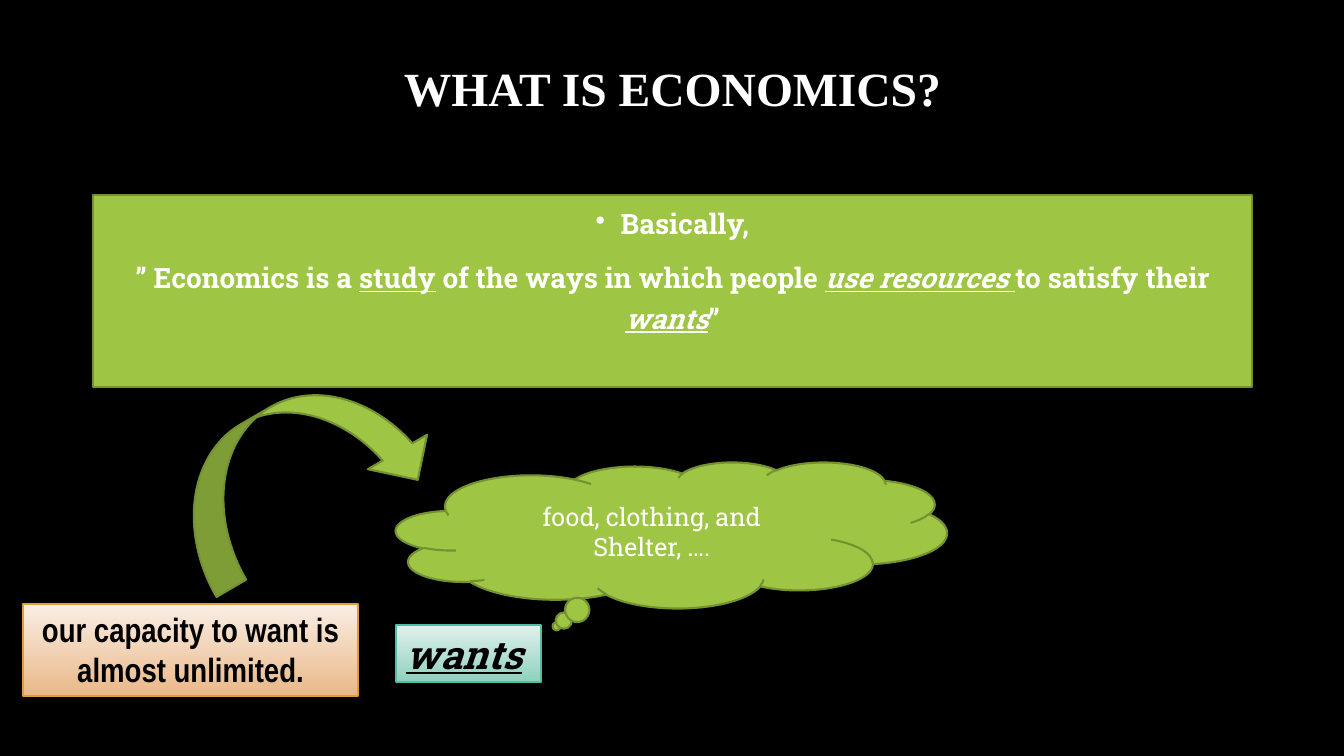
from pptx import Presentation
from pptx.dml.color import RGBColor
from pptx.enum.shapes import MSO_SHAPE as Shape
from pptx.enum.text import MSO_ANCHOR as Anchor, MSO_AUTO_SIZE as AutoSize, PP_ALIGN as Align
from pptx.oxml import parse_xml
from pptx.oxml.ns import nsdecls
from pptx.util import Pt

BLACK, WHITE = RGBColor(0, 0, 0), RGBColor(255, 255, 255)
GREEN, DARK_GREEN = RGBColor(0x9E, 0xC5, 0x44), RGBColor(0x75, 0x92, 0x32)
MINT = [RGBColor(0xE1, 0xF1, 0xEC), RGBColor(0x8F, 0xD1, 0xBE)]
TEAL = RGBColor(0x50, 0xBE, 0xA3)
PEACH = [RGBColor(0xF9, 0xEE, 0xE5), RGBColor(0xEA, 0xB8, 0x87)]
ORANGE = RGBColor(0xDE, 0x9C, 0x3C)
SLAB, SERIF, NARROW = "Roboto Slab", "Times New Roman", "Arial Narrow"

# Content: each paragraph is a list of (text, style); u = underline, i = italic
TITLE = [[("WHAT IS ECONOMICS?", "")]]
DEFINITION = [
    [("Basically,", "")],
    [("”\u00a0Economics is a ", ""), ("study", "u"),
     (" of the ways in which people ", ""), ("use resources ", "iu"),
     ("to satisfy their ", ""), ("wants", "iu"), ("”", "")],
]
NEEDS = [[("food, clothing, and", "")], [("Shelter, ….", "")]]
WANTS = [[("wants", "iu")]]
CAPACITY = [[("our capacity to want is almost unlimited.", "")]]

# Places in px: left, top, width, height
TITLE_BOX = (93, 40, 1159, 103)
DEFINITION_BOX = (93, 195, 1159, 192)
CLOUD_BOX = (396, 462, 551, 146)
WANTS_BOX = (396, 625, 145, 57)
ARROW_BOX = (229, 337, 137, 267)
CAPACITY_BOX = (23, 604, 335, 92)


def px(length):
    return round(length * 914400 / 100.8)


def add_block(kind, box, fill, line, line_width):
    shape = slide.shapes.add_shape(kind, *map(px, box))
    shape.shadow.inherit = False
    if isinstance(fill, list):
        shape.fill.gradient()
        shape.fill.gradient_angle = 270
        for stop, color, position in zip(shape.fill.gradient_stops, fill, (0, 1)):
            stop.color.rgb, stop.position = color, position
    else:
        shape.fill.solid()
        shape.fill.fore_color.rgb = fill
    shape.line.color.rgb = line
    shape.line.width = Pt(line_width)
    return shape


def write(shape, paragraphs, font, size, color, bold=True, align=Align.CENTER,
          anchor=Anchor.TOP, spacing=1.0, before=0):
    frame = shape.text_frame
    frame.word_wrap = True
    frame.vertical_anchor = anchor
    for index, runs in enumerate(paragraphs):
        paragraph = frame.add_paragraph() if index else frame.paragraphs[0]
        paragraph.alignment = align
        paragraph.line_spacing = spacing
        paragraph.space_before = Pt(before)
        paragraph.font.name, paragraph.font.size = font, Pt(size)
        paragraph.font.bold = bold
        paragraph.font.color.rgb = color
        for text, style in runs:
            run = paragraph.add_run()
            run.text = text
            if "i" in style:
                run.font.italic = True
            if "u" in style:
                run.font.underline = True
    return frame


def add_bullet(paragraph, indent):
    properties = paragraph._p.get_or_add_pPr()
    properties.set("marL", str(indent))
    properties.set("indent", str(-indent))
    bullet = parse_xml(f'<a:buChar {nsdecls("a")} char="•"/>')
    properties.insert_element_before(bullet, "a:tabLst", "a:defRPr", "a:extLst")


presentation = Presentation()
presentation.slide_width, presentation.slide_height = px(1344), px(756)
slide = presentation.slides.add_slide(presentation.slide_layouts[6])
slide.background.fill.solid()
slide.background.fill.fore_color.rgb = BLACK

# Title
title = slide.shapes.add_textbox(*map(px, TITLE_BOX))
write(title, TITLE, SERIF, 34, WHITE, anchor=Anchor.MIDDLE, spacing=0.9)

# Definition panel
definition = add_block(Shape.RECTANGLE, DEFINITION_BOX, GREEN, DARK_GREEN, 1.5)
frame = write(definition, DEFINITION, SLAB, 20, WHITE, spacing=1.2, before=10)
add_bullet(frame.paragraphs[0], px(25))

# Cloud of needs
cloud = add_block(Shape.CLOUD_CALLOUT, CLOUD_BOX, GREEN, DARK_GREEN, 1.5)
write(cloud, NEEDS, SLAB, 18, WHITE, bold=False, anchor=Anchor.MIDDLE)

# Wants label
wants = add_block(Shape.RECTANGLE, WANTS_BOX, MINT, TEAL, 1)
write(wants, WANTS, SLAB, 28, BLACK, align=Align.LEFT).auto_size = AutoSize.SHAPE_TO_FIT_TEXT

# Arrow from the capacity label to the cloud
arrow = add_block(Shape.CURVED_LEFT_ARROW, ARROW_BOX, GREEN, DARK_GREEN, 1.5)
arrow.rotation = 239.8

# Capacity label
capacity = add_block(Shape.RECTANGLE, CAPACITY_BOX, PEACH, ORANGE, 1)
write(capacity, CAPACITY, NARROW, 24, BLACK).auto_size = AutoSize.SHAPE_TO_FIT_TEXT

presentation.save("out.pptx")
